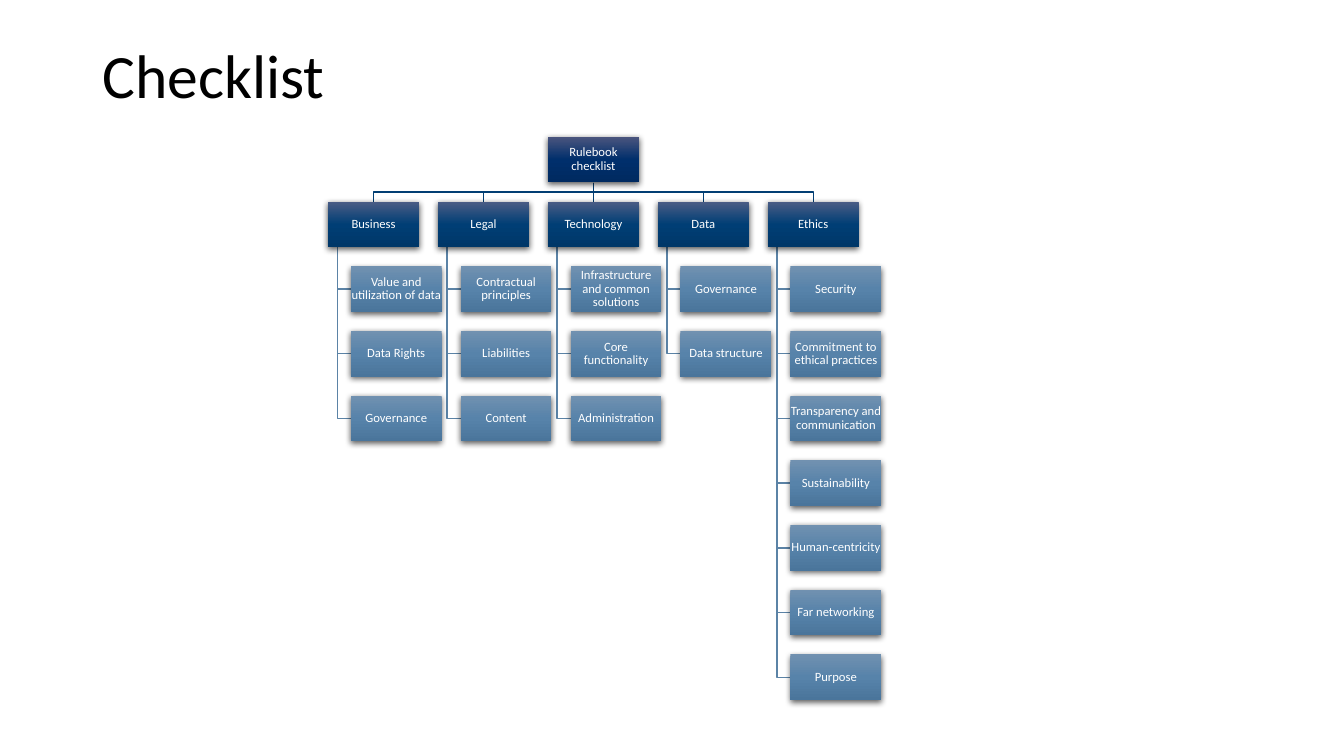
import copy
from dataclasses import dataclass

import pptx
import pptx.dml.color
import pptx.enum.shapes
import pptx.enum.text
import pptx.oxml
import pptx.oxml.ns
import pptx.util
from pptx.util import Cm

# Grid of the chart, in centimetres
LEFT, TOP = 8.27, 3.45
STEP, ROW = 2.77, 1.63
WIDE, HIGH = 2.29, 1.15
INDENT, TRUNK = 0.57, 0.23

# Gradient stops from top to bottom, and line colours
ROOT = ("4B557E", "002F6C", "002A60")
HEAD = ("4B5D85", "003E75", "003768")
LEAF = ("7191B0", "5783AA", "4A759B")
DARK, LIGHT = "023E73", "5B83A6"

SHADOW = (
    '<a:outerShdw %s blurRad="57150" dist="19050" dir="5400000" algn="ctr" '
    'rotWithShape="0"><a:srgbClr val="000000"><a:alpha val="63000"/>'
    "</a:srgbClr></a:outerShdw>" % pptx.oxml.ns.nsdecls("a")
)


@dataclass
class Branch:
    name: str
    items: list[str]


BRANCHES = [
    Branch("Business", ["Value and utilization of data", "Data Rights", "Governance"]),
    Branch("Legal", ["Contractual principles", "Liabilities", "Content"]),
    Branch("Technology", ["Infrastructure and common solutions",
                          "Core functionality", "Administration"]),
    Branch("Data", ["Governance", "Data structure"]),
    Branch("Ethics", ["Security", "Commitment to ethical practices",
                      "Transparency and communication", "Sustainability",
                      "Human-centricity", "Far networking", "Purpose"]),
]


def paint(code: str) -> pptx.dml.color.RGBColor:
    return pptx.dml.color.RGBColor.from_string(code)


def write(shape, text: str, *, size: float, color: str, align: str = "LEFT",
          anchor: str = "TOP", inset: float | None = None) -> None:
    frame = shape.text_frame
    frame.text = text
    frame.word_wrap = True
    frame.auto_size = pptx.enum.text.MSO_AUTO_SIZE.NONE
    frame.vertical_anchor = pptx.enum.text.MSO_ANCHOR[anchor]
    if inset is not None:
        frame.margin_left = frame.margin_right = Cm(inset)
        frame.margin_top = frame.margin_bottom = Cm(inset)
    para = frame.paragraphs[0]
    para.alignment = pptx.enum.text.PP_ALIGN[align]
    para.line_spacing = 0.9
    font = para.runs[0].font
    font.name = "Calibri"
    font.size = pptx.util.Pt(size)
    font.color.rgb = paint(color)


def box(slide, text: str, x: float, y: float, shades: tuple[str, ...]) -> None:
    shape = slide.shapes.add_shape(
        pptx.enum.shapes.MSO_SHAPE.RECTANGLE, Cm(x), Cm(y), Cm(WIDE), Cm(HIGH))
    shape.line.fill.background()

    # Three-stop gradient, running down
    shape.fill.gradient()
    shape.fill.gradient_angle = 270
    stops = shape.element.spPr.find(".//" + pptx.oxml.ns.qn("a:gsLst"))
    stops.insert(1, copy.deepcopy(stops[0]))
    for stop, shade, place in zip(shape.fill.gradient_stops, shades, (0, 0.5, 1)):
        stop.color.rgb = paint(shade)
        stop.position = place

    # Soft shadow below
    shape.shadow.inherit = False
    effects = shape.element.spPr.find(pptx.oxml.ns.qn("a:effectLst"))
    effects.append(pptx.oxml.parse_xml(SHADOW))

    write(shape, text, size=9, color="FFFFFF", align="CENTER",
          anchor="MIDDLE", inset=0.01)


def link(slide, points: list[tuple[float, float]], color: str) -> None:
    start, *rest = [(Cm(x), Cm(y)) for x, y in points]
    if rest[-1][0] == start[0]:
        line = slide.shapes.add_connector(
            pptx.enum.shapes.MSO_CONNECTOR.STRAIGHT, *start, *rest[-1])
        line.element.spPr.append(pptx.oxml.parse_xml(
            "<a:effectLst %s/>" % pptx.oxml.ns.nsdecls("a")))
    else:
        path = slide.shapes.build_freeform(*start)
        path.add_line_segments(rest, close=False)
        line = path.convert_to_shape()
        line.fill.background()
        line.shadow.inherit = False
    line.line.color.rgb = paint(color)
    line.line.width = pptx.util.Pt(1)


def tree(slide) -> None:
    root = LEFT + STEP * (len(BRANCHES) // 2)
    mid = root + WIDE / 2
    base, head = TOP + HIGH, TOP + ROW
    bend = (base + head) / 2
    lefts = [LEFT + STEP * col for col in range(len(BRANCHES))]

    # Lines lie behind the boxes
    for x, branch in zip(lefts, BRANCHES):
        end = x + WIDE / 2
        link(slide, [(mid, base), (mid, bend), (end, bend), (end, head)], DARK)
        for row in range(len(branch.items), 0, -1):
            y = head + ROW * row + HIGH / 2
            stem = x + TRUNK
            link(slide, [(stem, head + HIGH), (stem, y), (x + INDENT, y)], LIGHT)

    # Boxes
    box(slide, "Rulebook checklist", root, TOP, ROOT)
    for x, branch in zip(lefts, BRANCHES):
        box(slide, branch.name, x, head, HEAD)
        for row, item in enumerate(branch.items, 1):
            box(slide, item, x + INDENT, head + ROW * row, LEAF)


def main() -> None:
    deck = pptx.Presentation()
    deck.slide_width, deck.slide_height = Cm(33.87), Cm(19.05)
    slide = deck.slides.add_slide(deck.slide_layouts[5])

    # Title
    title = slide.shapes.title
    title.left, title.top = Cm(2.33), Cm(1.01)
    title.width, title.height = Cm(29.21), Cm(3.68)
    write(title, "Checklist", size=44, color="000000")

    # Chart
    tree(slide)
    deck.save("out.pptx")


if __name__ == "__main__":
    main()
